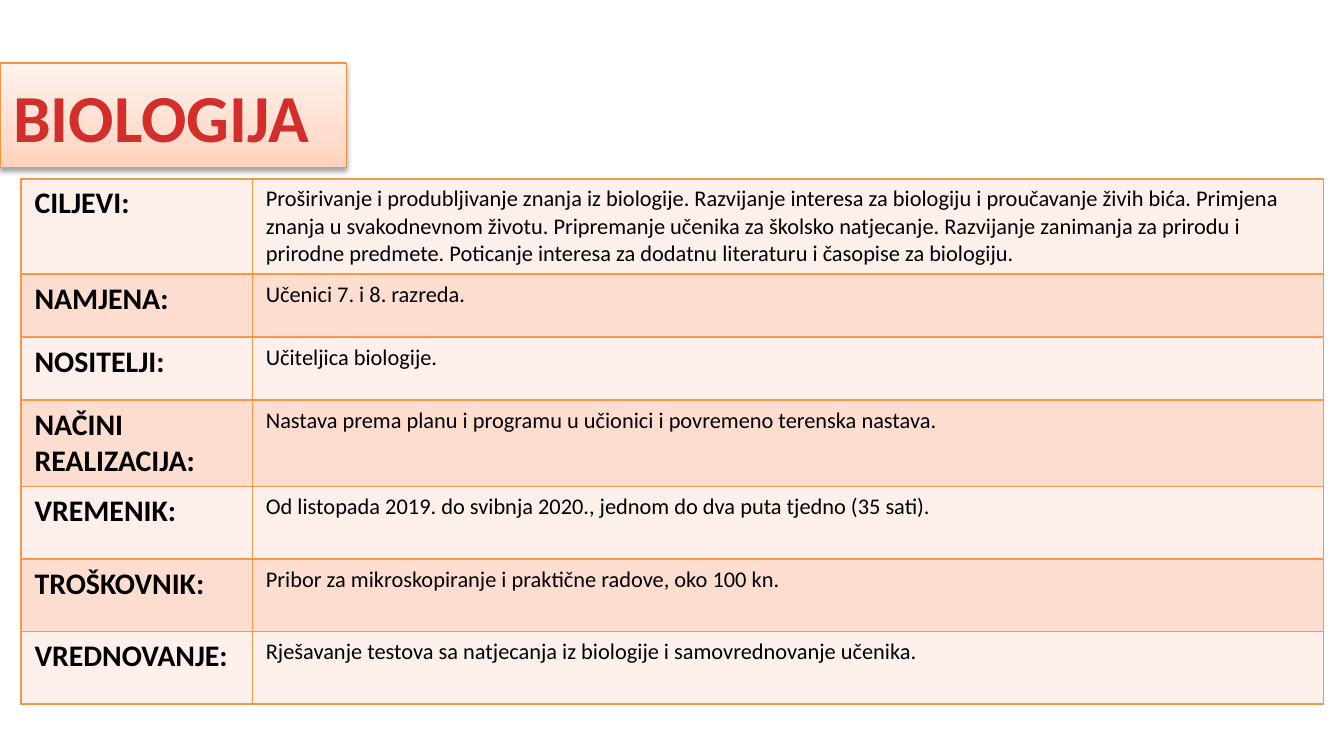
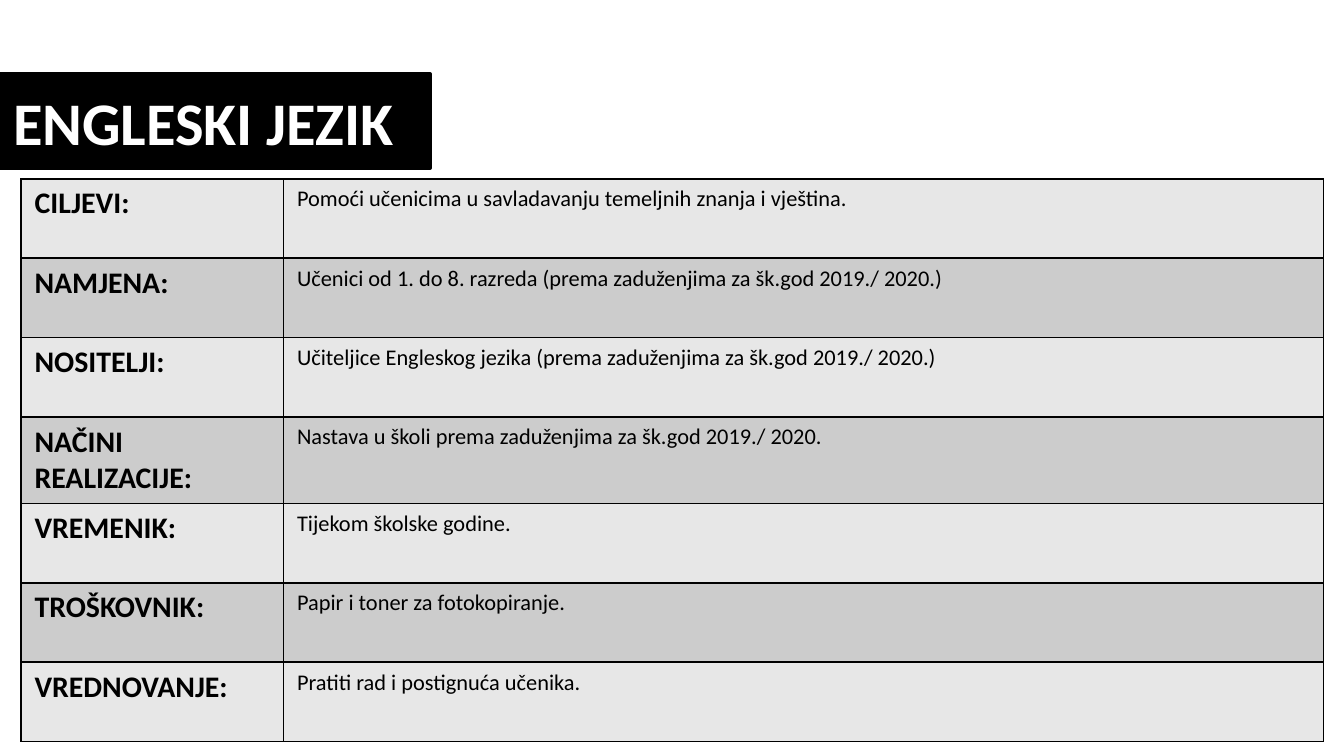
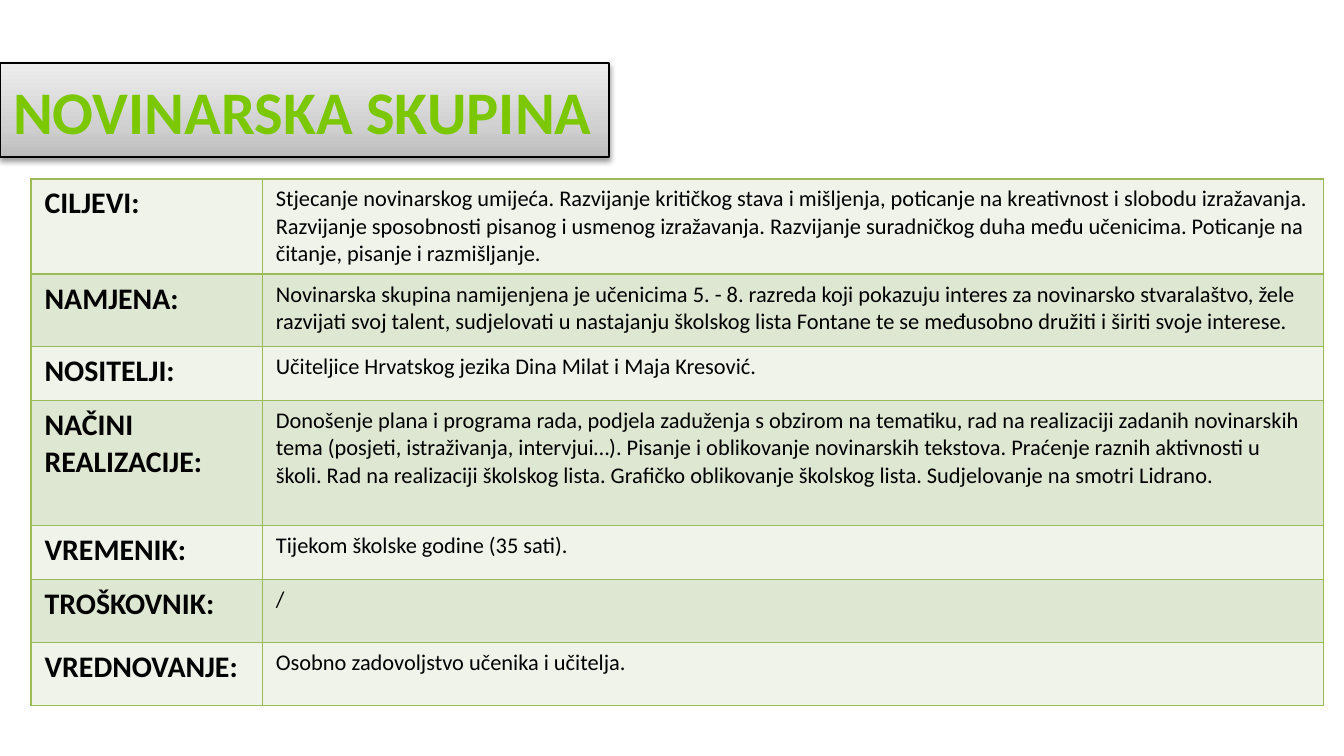
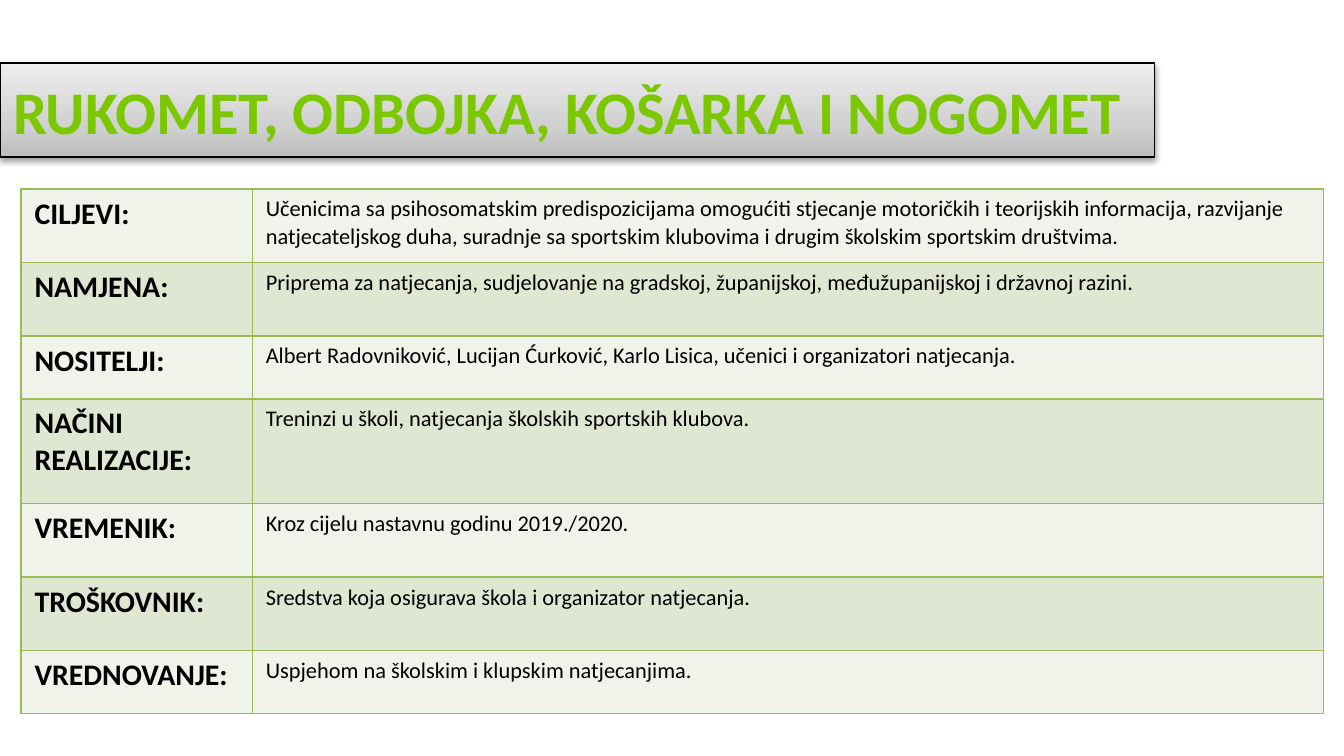
from copy import deepcopy
from dataclasses import dataclass

from lxml.etree import SubElement
from pptx import Presentation
from pptx.dml.color import RGBColor
from pptx.enum.shapes import MSO_SHAPE
from pptx.enum.text import MSO_ANCHOR, PP_ALIGN
from pptx.oxml.ns import qn
from pptx.util import Cm, Pt

BLACK = RGBColor(0x00, 0x00, 0x00)
WHITE = RGBColor(0xFF, 0xFF, 0xFF)
RED = RGBColor(0xD0, 0x2F, 0x2C)
LIME = RGBColor(0x7C, 0xC8, 0x00)
ORANGE = RGBColor(0xF7, 0x96, 0x46)
TITLE_ORANGE = RGBColor(0xF6, 0x92, 0x40)
GREEN = RGBColor(0x9B, 0xBB, 0x59)
ORANGE_BANDS = (RGBColor(0xFD, 0xEF, 0xE9), RGBColor(0xFC, 0xDD, 0xCF))
GRAY_BANDS = (RGBColor(0xE7, 0xE7, 0xE7), RGBColor(0xCC, 0xCC, 0xCC))
GREEN_BANDS = (RGBColor(0xEF, 0xF3, 0xEA), RGBColor(0xDE, 0xE7, 0xD1))
PEACH_GRADIENT = (
    RGBColor(0xFF, 0xD2, 0xBD), RGBColor(0xFF, 0xDE, 0xD0), RGBColor(0xFF, 0xF2, 0xED))
GRAY_GRADIENT = (
    RGBColor(0xBD, 0xBD, 0xBD), RGBColor(0xD1, 0xD1, 0xD1), RGBColor(0xEE, 0xEE, 0xEE))
GRADIENT_POSITIONS = (0, 0.35, 1)

FONT = "Calibri"
TABLE_RIGHT = 25.01
LABELS = ("CILJEVI:", "NAMJENA:", "NOSITELJI:", "NAČINI REALIZACIJE:",
          "VREMENIK:", "TROŠKOVNIK:", "VREDNOVANJE:")


@dataclass
class Theme:
    title_color: RGBColor
    title_line: RGBColor
    title_line_width: float
    title_gradient: tuple
    border: RGBColor
    bands: tuple


ORANGE_THEME = Theme(RED, TITLE_ORANGE, 0.75, PEACH_GRADIENT, ORANGE, ORANGE_BANDS)
BLACK_THEME = Theme(WHITE, BLACK, 2, (), BLACK, GRAY_BANDS)
GREEN_THEME = Theme(LIME, BLACK, 0.75, GRAY_GRADIENT, GREEN, GREEN_BANDS)


class ProgrammeDeck:
    """Holds the presentation, the current slide and its theme."""

    def __init__(self):
        self.presentation = Presentation()
        self.presentation.slide_width = Cm(25.4)
        self.presentation.slide_height = Cm(14.29)

    def add_slide(self, theme):
        self.theme = theme
        self.slide = self.presentation.slides.add_slide(self.presentation.slide_layouts[6])

    def add_text(self, text_frame, text, size, color, bold):
        paragraph = text_frame.paragraphs[0]
        paragraph.alignment = PP_ALIGN.LEFT
        run = paragraph.add_run()
        run.text = text
        run.font.name = FONT
        run.font.size = Pt(size)
        run.font.bold = bold
        run.font.color.rgb = color

    def add_title(self, text, width, top=1.19, height=1.78, size=32.4):
        shape = self.slide.shapes.add_shape(
            MSO_SHAPE.RECTANGLE, Cm(0), Cm(top), Cm(width), Cm(height))
        shape.line.color.rgb = self.theme.title_line
        shape.line.width = Pt(self.theme.title_line_width)
        shape.shadow.inherit = False
        if self.theme.title_gradient:
            self.fill_gradient(shape)
            self.add_shadow(shape)
        else:
            shape.fill.solid()
            shape.fill.fore_color.rgb = BLACK
        shape.text_frame.word_wrap = True
        shape.text_frame.vertical_anchor = MSO_ANCHOR.MIDDLE
        self.add_text(shape.text_frame, text, size, self.theme.title_color, True)

    def fill_gradient(self, shape):
        """Fill from bottom to top with the three title colours."""
        shape.fill.gradient()
        shape.fill.gradient_angle = 90
        stop_list = next(shape._element.spPr.iter(qn("a:gsLst")))
        stop_list.insert(1, deepcopy(stop_list[0]))
        for stop, position, color in zip(
                shape.fill.gradient_stops, GRADIENT_POSITIONS, self.theme.title_gradient):
            stop.position = position
            stop.color.rgb = color

    def add_shadow(self, shape):
        effects = shape._element.spPr.find(qn("a:effectLst"))
        shadow = SubElement(effects, qn("a:outerShdw"), blurRad=str(Pt(3.1)),
                            dist=str(Pt(1.6)), dir="5400000", rotWithShape="0")
        color = SubElement(shadow, qn("a:srgbClr"), val=str(BLACK))
        SubElement(color, qn("a:alpha"), val="38000")

    def add_borders(self, cell):
        properties = cell._tc.get_or_add_tcPr()
        for side in ("lnL", "lnR", "lnT", "lnB"):
            line = SubElement(properties, qn(f"a:{side}"), w=str(Pt(1)))
            fill = SubElement(line, qn("a:solidFill"))
            SubElement(fill, qn("a:srgbClr"), val=str(self.theme.border))

    def add_programme(self, descriptions, row_heights, labels=LABELS,
                      left=0.4, top=3.38, label_width=4.37):
        width = TABLE_RIGHT - left
        table = self.slide.shapes.add_table(
            len(labels), 2, Cm(left), Cm(top), Cm(width), Cm(sum(row_heights))).table
        table.first_row = False
        table.horz_banding = False
        table.columns[0].width = Cm(label_width)
        table.columns[1].width = Cm(width - label_width)
        for index, (label, description) in enumerate(zip(labels, descriptions)):
            table.rows[index].height = Cm(row_heights[index])
            for column, (text, size) in enumerate(((label, 16), (description, 12))):
                cell = table.cell(index, column)
                self.add_borders(cell)
                cell.fill.solid()
                cell.fill.fore_color.rgb = self.theme.bands[index % 2]
                self.add_text(cell.text_frame, text, size, BLACK, column == 0)


def add_biology(deck):
    deck.add_slide(ORANGE_THEME)
    deck.add_title("BIOLOGIJA", 6.55, height=1.98, size=36)
    deck.add_programme(
        (
            "Proširivanje i produbljivanje znanja iz biologije. Razvijanje interesa za "
            "biologiju i proučavanje živih bića. Primjena znanja u svakodnevnom životu. "
            "Pripremanje učenika za školsko natjecanje. Razvijanje zanimanja za prirodu i "
            "prirodne predmete. Poticanje interesa za dodatnu literaturu i časopise za "
            "biologiju.",
            "Učenici 7. i 8. razreda.",
            "Učiteljica biologije.",
            "Nastava prema planu i programu u učionici i povremeno terenska nastava.",
            "Od listopada 2019. do svibnja 2020., jednom do dva puta tjedno (35 sati).",
            "Pribor za mikroskopiranje i praktične radove, oko 100 kn.",
            "Rješavanje testova sa natjecanja iz biologije i samovrednovanje učenika.",
        ),
        (1.37, 1.19, 1.19, 1.6, 1.37, 1.37, 1.37),
        labels=LABELS[:3] + ("NAČINI REALIZACIJA:",) + LABELS[4:])


def add_english(deck):
    deck.add_slide(BLACK_THEME)
    deck.add_title("ENGLESKI JEZIK", 8.13, top=1.4)
    deck.add_programme(
        (
            "Pomoći učenicima u savladavanju temeljnih znanja i vještina.",
            "Učenici od 1. do 8. razreda (prema zaduženjima za šk.god 2019./ 2020.)",
            "Učiteljice Engleskog jezika (prema zaduženjima za šk.god 2019./ 2020.)",
            "Nastava u školi prema zaduženjima za šk.god 2019./ 2020.",
            "Tijekom školske godine.",
            "Papir i toner za fotokopiranje.",
            "Pratiti rad i postignuća učenika.",
        ),
        (1.5,) * len(LABELS), label_width=4.96)


def add_journalism(deck):
    deck.add_slide(GREEN_THEME)
    deck.add_title("NOVINARSKA SKUPINA", 11.51)
    deck.add_programme(
        (
            "Stjecanje novinarskog umijeća. Razvijanje kritičkog stava i mišljenja, "
            "poticanje na kreativnost i slobodu izražavanja. Razvijanje sposobnosti pisanog "
            "i usmenog izražavanja. Razvijanje suradničkog duha među učenicima. Poticanje "
            "na čitanje, pisanje i razmišljanje.",
            "Novinarska skupina namijenjena je učenicima 5. - 8. razreda koji pokazuju "
            "interes za novinarsko stvaralaštvo, žele razvijati svoj talent, sudjelovati u "
            "nastajanju školskog lista Fontane te se međusobno družiti i širiti svoje "
            "interese.",
            "Učiteljice Hrvatskog jezika Dina Milat i Maja Kresović.",
            "Donošenje plana i programa rada, podjela zaduženja s obzirom na tematiku, rad "
            "na realizaciji zadanih novinarskih tema (posjeti, istraživanja, intervjui…). "
            "Pisanje i oblikovanje novinarskih tekstova. Praćenje raznih aktivnosti u "
            "školi. Rad na realizaciji školskog lista. Grafičko oblikovanje školskog lista. "
            "Sudjelovanje na smotri Lidrano.",
            "Tijekom školske godine (35 sati).",
            "/",
            "Osobno zadovoljstvo učenika i učitelja.",
        ),
        (1.37, 1.37, 1.02, 2.36, 1.02, 1.19, 1.19), left=0.59)


def add_sports(deck):
    deck.add_slide(GREEN_THEME)
    deck.add_title("RUKOMET, ODBOJKA, KOŠARKA I NOGOMET", 21.82)
    deck.add_programme(
        (
            "Učenicima sa psihosomatskim predispozicijama omogućiti stjecanje motoričkih i "
            "teorijskih informacija, razvijanje natjecateljskog duha, suradnje sa sportskim "
            "klubovima i drugim školskim sportskim društvima.",
            "Priprema za natjecanja, sudjelovanje na gradskoj, županijskoj, međužupanijskoj "
            "i državnoj razini.",
            "Albert Radovniković, Lucijan Ćurković, Karlo Lisica, učenici i organizatori "
            "natjecanja.",
            "Treninzi u školi, natjecanja školskih sportskih klubova.",
            "Kroz cijelu nastavnu godinu 2019./2020.",
            "Sredstva koja osigurava škola i organizator natjecanja.",
            "Uspjehom na školskim i klupskim natjecanjima.",
        ),
        (1.39, 1.39, 1.19, 1.98, 1.39, 1.39, 1.19), top=3.57)


def main():
    deck = ProgrammeDeck()
    add_biology(deck)
    add_english(deck)
    add_journalism(deck)
    add_sports(deck)
    deck.presentation.save("out.pptx")


if __name__ == "__main__":
    main()
